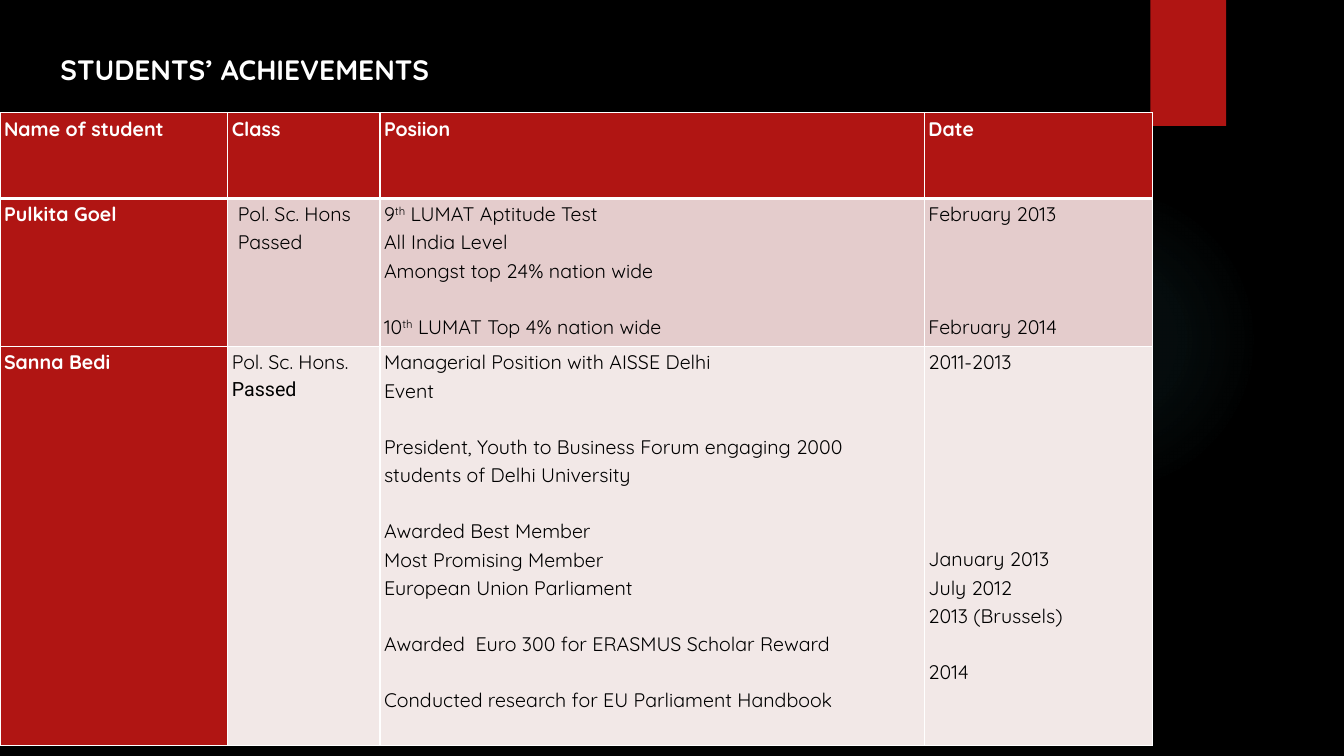
from dataclasses import dataclass

from lxml.etree import SubElement
from pptx import Presentation
from pptx.dml.color import RGBColor
from pptx.enum.shapes import MSO_SHAPE
from pptx.enum.text import MSO_AUTO_SIZE
from pptx.oxml import parse_xml
from pptx.oxml.ns import nsdecls, qn
from pptx.util import Emu, Inches, Pt


@dataclass(frozen=True)
class Theme:
    background: str = "000000"
    red: str = "B01513"
    pink: str = "E4CCCC"
    pale: str = "F2E8E7"
    light: str = "FFFFFF"
    dark: str = "000000"
    glow: str = "50B9C1"
    font: str = "Quicksand"
    second_font: str = "Roboto"
    title_size: float = 20
    cell_size: float = 14
    line_spacing: float = 1.15
    line_pitch: float = 20.1


@dataclass(frozen=True)
class Box:
    """Left, top, width and height in percent of the slide."""
    left: float
    top: float
    width: float
    height: float


@dataclass(frozen=True)
class Line:
    """One paragraph; text between carets is raised, gap counts skipped lines."""
    text: str
    gap: int = 0
    font: str = ""


@dataclass(frozen=True)
class Cell:
    lines: tuple[Line, ...]
    fill: str
    strong: bool = False
    inset: float = 0.04


T = Theme()
WIDTH, HEIGHT = Inches(13.33), Inches(7.5)

GLOW = Box(70.59, 24.4, 23.11, 41.07)
TAB = Box(85.6, 0, 5.63, 16.67)
TITLE = Box(3.75, 6.27, 53.64, 5.87)
TABLE = Box(0, 14.93, 85.74, 83.73)
COLUMNS = (16.95, 11.33, 40.51, 16.95)
ROWS = (11.33, 19.6, 52.8)


def heading(text: str) -> Cell:
    return Cell((Line(text),), T.red, strong=True)


ACHIEVEMENTS = (
    tuple(heading(t) for t in ("Name of student", "Class", "Posiion", "Date")),
    (
        heading("Pulkita Goel"),
        Cell((Line("Pol. Sc. Hons"), Line("Passed")), T.pink, inset=0.1),
        Cell((Line("9^th^ LUMAT Aptitude Test"),
              Line("All India Level"),
              Line("Amongst top 24% nation wide"),
              Line("10^th^ LUMAT Top 4% nation wide", gap=1)), T.pink),
        Cell((Line("February 2013"), Line("February 2014", gap=3)), T.pink),
    ),
    (
        heading("Sanna Bedi"),
        Cell((Line("Pol. Sc. Hons."), Line("Passed", font=T.second_font)), T.pale),
        Cell((Line("Managerial Position with AISSE Delhi"),
              Line("Event"),
              Line("President, Youth to Business Forum engaging 2000 "
                   "students of Delhi University", gap=1),
              Line("Awarded Best Member", gap=1),
              Line("Most Promising Member"),
              Line("European Union Parliament"),
              Line("Awarded  Euro 300 for ERASMUS Scholar Reward", gap=1),
              Line("Conducted research for EU Parliament Handbook", gap=1)), T.pale),
        Cell((Line("2011-2013"),
              Line("January 2013", gap=6),
              Line("July 2012"),
              Line("2013 (Brussels)"),
              Line("2014", gap=1)), T.pale),
    ),
)


def rgb(color: str) -> RGBColor:
    return RGBColor.from_string(color)


def across(share: float) -> Emu:
    return Emu(round(WIDTH * share / 100))


def down(share: float) -> Emu:
    return Emu(round(HEIGHT * share / 100))


def place(box: Box) -> tuple[Emu, Emu, Emu, Emu]:
    return across(box.left), down(box.top), across(box.width), down(box.height)


def set_font(p, size: float, color: str, bold: bool, name: str = T.font) -> None:
    f = p.font
    f.name, f.size, f.bold = name, Pt(size), bold
    f.color.rgb = rgb(color)


def add_plain_shape(s, kind: MSO_SHAPE, box: Box, color: str):
    sp = s.shapes.add_shape(kind, *place(box))
    sp.shadow.inherit = False
    sp.fill.solid()
    sp.fill.fore_color.rgb = rgb(color)
    sp.line.fill.background()
    return sp


def add_glow(s) -> None:
    sp = add_plain_shape(s, MSO_SHAPE.OVAL, GLOW, T.glow)
    stops = "".join(
        f'<a:gs pos="{pos * 1000}"><a:srgbClr val="{T.glow}">'
        f'<a:alpha val="{alpha * 1000}"/></a:srgbClr></a:gs>'
        for pos, alpha in ((0, 7), (36, 6), (69, 0), (100, 0)))
    gradient = parse_xml(
        f'<a:gradFill {nsdecls("a")}><a:gsLst>{stops}</a:gsLst><a:path path="circle">'
        '<a:fillToRect l="50000" t="50000" r="50000" b="50000"/></a:path></a:gradFill>')
    solid = sp.element.spPr.find(qn("a:solidFill"))
    solid.getparent().replace(solid, gradient)


def add_title(s) -> None:
    tf = s.shapes.add_textbox(*place(TITLE)).text_frame
    tf.word_wrap = True
    tf.auto_size = MSO_AUTO_SIZE.SHAPE_TO_FIT_TEXT
    p = tf.paragraphs[0]
    p.add_run().text = "STUDENTS’ ACHIEVEMENTS"
    set_font(p, T.title_size, T.light, True)


def set_borders(cell, top: float, bottom: float) -> None:
    tc_pr = cell._tc.get_or_add_tcPr()
    for side, width in (("L", 1), ("R", 1), ("T", top), ("B", bottom)):
        ln = SubElement(tc_pr, qn(f"a:ln{side}"), w=str(Pt(width)))
        SubElement(SubElement(ln, qn("a:solidFill")), qn("a:srgbClr"), val=T.light)


def fill_cell(cell, content: Cell) -> None:
    cell.fill.solid()
    cell.fill.fore_color.rgb = rgb(content.fill)
    cell.margin_left, cell.margin_right = Inches(content.inset), Inches(0.05)
    cell.margin_top = cell.margin_bottom = 0
    tf = cell.text_frame
    for i, line in enumerate(content.lines):
        p = tf.add_paragraph() if i else tf.paragraphs[0]
        p.line_spacing = T.line_spacing
        p.space_before = Pt(line.gap * T.line_pitch)
        for part, text in enumerate(line.text.split("^")):
            r = p.add_run()
            r.text = text
            if part % 2:
                r.font._element.set("baseline", "30000")
        set_font(p, T.cell_size, T.light if content.strong else T.dark,
                 content.strong, line.font or T.font)


def add_achievements(s) -> None:
    table = s.shapes.add_table(len(ROWS), len(COLUMNS), *place(TABLE)).table
    table.horz_banding = False
    for column, share in zip(table.columns, COLUMNS):
        column.width = across(share)
    for row, share in zip(table.rows, ROWS):
        row.height = down(share)
    for i, contents in enumerate(ACHIEVEMENTS):
        for j, content in enumerate(contents):
            cell = table.cell(i, j)
            # A heavy rule parts the header from the body
            set_borders(cell, top=3 if i == 1 else 1, bottom=3 if i == 0 else 1)
            fill_cell(cell, content)


def main() -> None:
    prs = Presentation()
    prs.slide_width, prs.slide_height = WIDTH, HEIGHT
    s = prs.slides.add_slide(prs.slide_layouts[6])

    # Backdrop
    s.background.fill.solid()
    s.background.fill.fore_color.rgb = rgb(T.background)
    add_glow(s)
    add_plain_shape(s, MSO_SHAPE.RECTANGLE, TAB, T.red)

    # Content
    add_achievements(s)
    add_title(s)
    prs.save("out.pptx")


if __name__ == "__main__":
    main()
